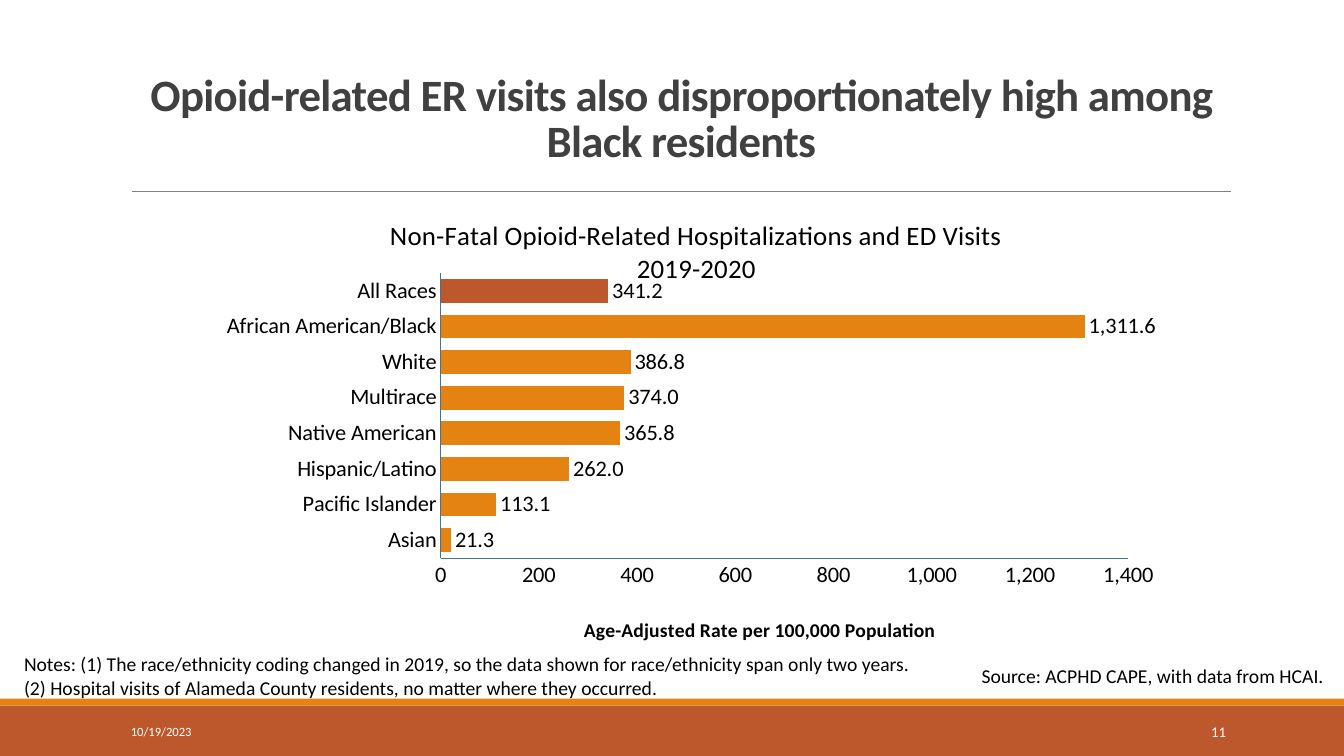
"""Build a slide with a bar chart of opioid-related hospital visits by race."""
from dataclasses import dataclass

from lxml import etree
from pptx import Presentation
from pptx.chart.data import CategoryChartData
from pptx.dml.color import RGBColor
from pptx.enum.chart import XL_CHART_TYPE, XL_LABEL_POSITION, XL_TICK_MARK
from pptx.enum.shapes import MSO_CONNECTOR, MSO_SHAPE
from pptx.enum.text import MSO_ANCHOR, PP_ALIGN
from pptx.oxml import parse_xml
from pptx.oxml.ns import nsdecls, qn
from pptx.util import Pt

BAR_CLUSTERED = XL_CHART_TYPE.BAR_CLUSTERED
OUTSIDE_END = XL_LABEL_POSITION.OUTSIDE_END
NO_TICK = XL_TICK_MARK.NONE
STRAIGHT = MSO_CONNECTOR.STRAIGHT
RECTANGLE = MSO_SHAPE.RECTANGLE
TOP, MIDDLE = MSO_ANCHOR.TOP, MSO_ANCHOR.MIDDLE
LEFT, CENTER, RIGHT = PP_ALIGN.LEFT, PP_ALIGN.CENTER, PP_ALIGN.RIGHT


@dataclass(frozen=True)
class Theme:
    font: str = "Calibri"
    rust: RGBColor = RGBColor(0xBD, 0x58, 0x2C)
    orange: RGBColor = RGBColor(0xE4, 0x83, 0x12)
    heading: RGBColor = RGBColor(0x40, 0x40, 0x40)
    rule: RGBColor = RGBColor(0x80, 0x80, 0x80)
    axis: RGBColor = RGBColor(0x40, 0x74, 0x9B)
    black: RGBColor = RGBColor(0, 0, 0)
    white: RGBColor = RGBColor(0xFF, 0xFF, 0xFF)
    heading_size: float = 32
    chart_title_size: float = 19.2
    chart_size: float = 16
    note_size: float = 14
    number_size: float = 10.5
    date_size: float = 9


theme = Theme()


def write(frame, text, size, color, bold=False, align=LEFT):
    frame.text = text
    for paragraph in frame.paragraphs:
        paragraph.alignment = align
        font = paragraph.font
        font.name, font.size, font.bold = theme.font, Pt(size), bold
        font.color.rgb = color


def place(element, index, target, **fractions):
    for layout in element.findall(qn("c:layout")):
        element.remove(layout)
    values = "".join(f'<c:{name} val="{value}"/>' for name, value in fractions.items())
    element.insert(index, parse_xml(
        f'<c:layout {nsdecls("c")}><c:manualLayout>{target}'
        f'<c:xMode val="edge"/><c:yMode val="edge"/>{values}'
        "</c:manualLayout></c:layout>"))


presentation = Presentation()
presentation.slide_width, presentation.slide_height = Pt(960), Pt(540)
slide = presentation.slides.add_slide(presentation.slide_layouts[6])
shapes = slide.shapes

for top, height, color in [(504, 36, theme.rust), (499, 5, theme.orange)]:
    band = shapes.add_shape(RECTANGLE, Pt(0), Pt(top), Pt(960), Pt(height))
    band.shadow.inherit = False
    band.fill.solid()
    band.fill.fore_color.rgb = color
    band.line.fill.background()

rule = shapes.add_connector(STRAIGHT, Pt(94.3), Pt(136.8), Pt(879), Pt(136.8))
rule.line.color.rgb = theme.rule
rule.line.width = Pt(0.5)
etree.SubElement(rule._element.spPr, qn("a:effectLst"))

notes = (
    "Notes: (1) The race/ethnicity coding changed in 2019, so the data shown "
    "for race/ethnicity span only two years.\n"
    "(2) Hospital visits of Alameda County residents, no matter where they occurred."
)
for text, box, size, color, align, anchor, wrap in [
    ("10/19/2023", (86.4, 508.3, 194.4, 28.8), theme.date_size, theme.white, LEFT, MIDDLE, True),
    ("11", (779.8, 508.3, 103, 28.8), theme.number_size, theme.white, RIGHT, MIDDLE, True),
    (notes, (10.1, 462.2, 653, 41), theme.note_size, theme.black, LEFT, TOP, False),
    ("Source: ACPHD CAPE, with data from HCAI.", (694, 470.9, 260.6, 24.5),
     theme.note_size, theme.black, LEFT, TOP, False),
]:
    frame = shapes.add_textbox(*map(Pt, box)).text_frame
    frame.word_wrap = wrap
    frame.vertical_anchor = anchor
    write(frame, text, size, color, align=align)

heading = shapes.add_textbox(Pt(90.7), Pt(49.7), Pt(792), Pt(73.4)).text_frame
heading.word_wrap = True
heading.vertical_anchor = MIDDLE
write(heading, "Opioid-related ER visits also disproportionately high among Black residents",
      theme.heading_size, theme.heading, True, CENTER)
heading.paragraphs[0].line_spacing = 0.85
heading.paragraphs[0].runs[0]._r.get_or_add_rPr().set("spc", "-50")

rates = {
    "Asian": 21.3,
    "Pacific Islander": 113.1,
    "Hispanic/Latino": 262,
    "Native American": 365.8,
    "Multirace": 374,
    "White": 386.8,
    "African American/Black": 1311.6,
    "All Races": 341.2,
}
chart_data = CategoryChartData()
chart_data.categories = list(rates)
chart_data.add_series("Series 1", list(rates.values()))
chart = shapes.add_chart(BAR_CLUSTERED, Pt(115.2), Pt(136.8), Pt(767.5), Pt(326.2),
                         chart_data).chart
chart.has_legend = False
chart.font.name, chart.font.size = theme.font, Pt(theme.chart_size)
chart.font.color.rgb = theme.black

write(chart.chart_title.text_frame,
      "Non-Fatal Opioid-Related Hospitalizations and ED Visits\n2019-2020",
      theme.chart_title_size, theme.black, align=CENTER)
place(chart.chart_title._element, 1, "", x=0.21, y=0.05)

for axis in (chart.category_axis, chart.value_axis):
    axis.has_major_gridlines = False
    axis.major_tick_mark = axis.minor_tick_mark = NO_TICK
    axis.format.line.color.rgb = theme.axis
    axis.format.line.width = Pt(0.75)

value_axis = chart.value_axis
value_axis.minimum_scale, value_axis.maximum_scale = 0, 1400
value_axis.major_unit = 200
value_axis.tick_labels.number_format = "#,##0"
value_axis.tick_labels.number_format_is_linked = False
write(value_axis.axis_title.text_frame, "Age-Adjusted Rate per 100,000 Population",
      theme.note_size, theme.black, True, CENTER)
place(value_axis.axis_title._element, 1, "", x=0.39, y=0.93)

plot = chart.plots[0]
plot.gap_width = 50
plot.vary_by_categories = False
series = plot.series[0]
series.format.fill.solid()
series.format.fill.fore_color.rgb = theme.orange
all_races = series.points[list(rates).index("All Races")].format.fill
all_races.solid()
all_races.fore_color.rgb = theme.rust

labels = series.data_labels
labels.show_value = True
labels.position = OUTSIDE_END
labels.number_format = "#,##0.0"
labels.number_format_is_linked = False
labels.font.name, labels.font.size = theme.font, Pt(theme.chart_size)
labels.font.color.rgb = theme.black

plot_area = chart._chartSpace.find(f'{qn("c:chart")}/{qn("c:plotArea")}')
place(plot_area, 0, '<c:layoutTarget val="inner"/>', x=0.26, y=0.18, w=0.64, h=0.63)

presentation.save("out.pptx")
